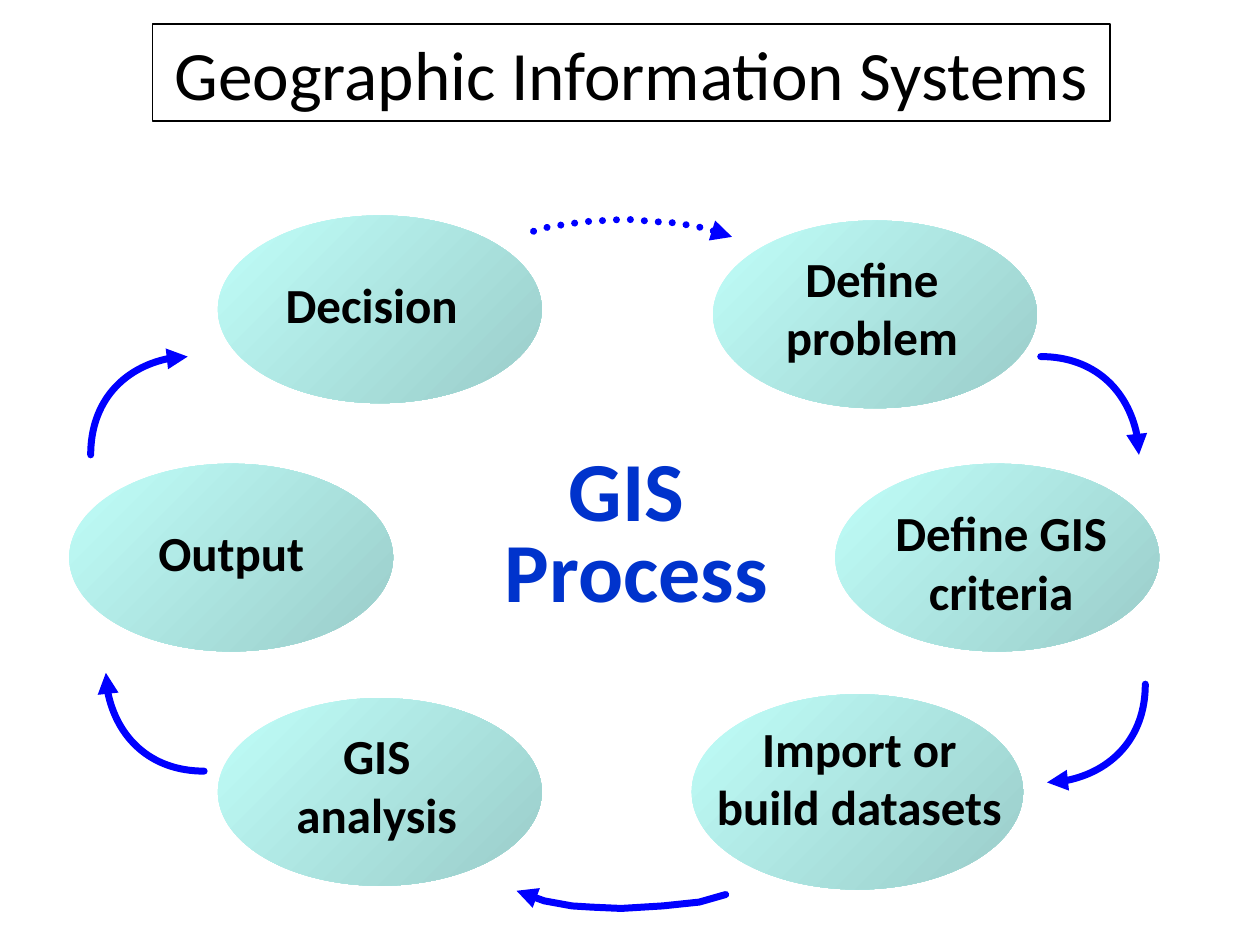
from lxml import etree
from pptx import Presentation
from pptx.dml.color import RGBColor
from pptx.enum.dml import MSO_LINE
from pptx.enum.shapes import MSO_SHAPE
from pptx.enum.text import MSO_ANCHOR, MSO_AUTO_SIZE, PP_ALIGN
from pptx.oxml.ns import qn
from pptx.util import Inches, Pt

BLACK = RGBColor(0x00, 0x00, 0x00)
WHITE = RGBColor(0xFF, 0xFF, 0xFF)
ARROW_BLUE = RGBColor(0x00, 0x00, 0xFF)
CENTER_BLUE = RGBColor(0x00, 0x33, 0xCC)
NODE_LIGHT = RGBColor(0xC0, 0xFE, 0xF9)
NODE_DARK = RGBColor(0x9A, 0xCC, 0xC9)

OVAL = MSO_SHAPE.OVAL
RECTANGLE = MSO_SHAPE.RECTANGLE
CENTER = PP_ALIGN.CENTER
MIDDLE = MSO_ANCHOR.MIDDLE
FIT_SHAPE = MSO_AUTO_SIZE.SHAPE_TO_FIT_TEXT
ROUND_DOT = MSO_LINE.ROUND_DOT

FONT = "Calibri"
ARC_RATIO = 0.55
NODE_SIZE = (2.57, 1.49)
WIDE_NODE_SIZE = (2.63, 1.55)

NODES = [
    ("Output", (0.55, 3.68, *NODE_SIZE), (1.13, 4.1, 1.41, 0.56)),
    ("GIS\vanalysis", (1.73, 5.54, *NODE_SIZE), (2.23, 5.71, 1.52, 1.03)),
    ("Import or\vbuild datasets", (5.49, 5.51, *WIDE_NODE_SIZE), (5.57, 5.65, 2.5, 1.03)),
    ("Define GIS\vcriteria", (6.63, 3.68, *NODE_SIZE), (6.92, 3.94, 2.05, 1.03)),
    ("Define\vproblem", (5.66, 1.75, *NODE_SIZE), (6.12, 1.92, 1.6, 1.03)),
    ("Decision", (1.73, 1.71, *NODE_SIZE), (2.15, 2.13, 1.6, 0.56)),
]
QUARTER_ARROWS = [
    ((8.26, 2.83), (9.04, 2.83), (9.04, 3.61)),
    ((9.09, 5.43), (9.09, 6.21), (8.31, 6.21)),
    ((1.62, 6.12), (0.84, 6.12), (0.84, 5.34)),
    ((0.72, 3.61), (0.72, 2.83), (1.49, 2.83)),
]
BOTTOM_ARROW = [(4.1, 7.07), (4.32, 7.15), (4.54, 7.19), (4.7, 7.2),
                (4.93, 7.21), (5.26, 7.19), (5.55, 7.16), (5.76, 7.1)]
TOP_ARROW = [(5.81, 1.88), (5.59, 1.81), (5.37, 1.77), (5.2, 1.76),
             (4.97, 1.74), (4.64, 1.76), (4.36, 1.8), (4.15, 1.86)]


def to_inches(values):
    """Convert a sequence of numbers to lengths."""
    return [Inches(value) for value in values]


def format_text(text_frame, text, size, color, bold=False, line_spacing=None):
    """Fill a text frame with centred, formatted text."""
    text_frame.text = text
    for paragraph in text_frame.paragraphs:
        paragraph.alignment = CENTER
        paragraph.line_spacing = line_spacing
        for run in paragraph.runs:
            run.font.name = FONT
            run.font.size = Pt(size)
            run.font.bold = bold
            run.font.color.rgb = color


def add_label(slide, box, text, size, color, line_spacing=None):
    """Add an unwrapped bold text box."""
    label = slide.shapes.add_textbox(*to_inches(box))
    label.text_frame.word_wrap = False
    label.text_frame.auto_size = FIT_SHAPE
    format_text(label.text_frame, text, size, color, True, line_spacing)


def add_title(slide, box):
    """Add the framed slide title."""
    title = slide.shapes.add_shape(RECTANGLE, *to_inches(box))
    title.shadow.inherit = False
    title.fill.solid()
    title.fill.fore_color.rgb = WHITE
    title.line.color.rgb = BLACK
    title.line.width = Pt(0.75)
    title.text_frame.word_wrap = True
    title.text_frame.vertical_anchor = MIDDLE
    format_text(title.text_frame, "Geographic Information Systems", 39.6, BLACK)


def add_node(slide, text, ellipse_box, label_box):
    """Add one shaded ellipse with its label."""
    ellipse = slide.shapes.add_shape(OVAL, *to_inches(ellipse_box))
    ellipse.shadow.inherit = False
    ellipse.fill.gradient()
    ellipse.fill.gradient_angle = 315
    for stop, color in zip(ellipse.fill.gradient_stops, (NODE_LIGHT, NODE_DARK)):
        stop.color.rgb = color
    ellipse.line.fill.background()
    add_label(slide, label_box, text, 28, BLACK)


def add_arrow(slide, points, arrow_end, dash=None):
    """Add an open outline through the points with one arrowhead."""
    start, *others = [to_inches(point) for point in points]
    builder = slide.shapes.build_freeform(*start)
    builder.add_line_segments(others, close=False)
    arrow = builder.convert_to_shape()
    arrow.shadow.inherit = False
    arrow.fill.background()
    arrow.line.color.rgb = ARROW_BLUE
    arrow.line.width = Pt(4)
    if dash:
        arrow.line.dash_style = dash
    line = arrow.line._get_or_add_ln()
    line.set("cap", "rnd")
    etree.SubElement(line, qn("a:round"))
    etree.SubElement(line, qn(arrow_end), type="triangle")
    return arrow


def add_quarter_arrow(slide, start, corner, end):
    """Add a quarter-ellipse arrow bending towards its corner."""
    controls = [
        tuple(a + ARC_RATIO * (b - a) for a, b in zip(point, corner))
        for point in (start, end)
    ]
    arrow = add_arrow(slide, [start, *controls, end], "a:tailEnd")
    outline = next(arrow.element.iter(qn("a:path")))
    curve = etree.SubElement(outline, qn("a:cubicBezTo"))
    for segment in outline.findall(qn("a:lnTo")):
        curve.append(segment[0])
        outline.remove(segment)


def add_cycle(slide):
    """Add the arrows, centre caption and nodes of the process cycle."""
    for start, corner, end in QUARTER_ARROWS:
        add_quarter_arrow(slide, start, corner, end)
    add_arrow(slide, BOTTOM_ARROW, "a:headEnd")
    add_arrow(slide, TOP_ARROW, "a:headEnd", ROUND_DOT)
    add_label(slide, (3.88, 3.58, 2.34, 1.38), "GIS \nProcess", 48, CENTER_BLUE, 0.8)
    for text, ellipse_box, label_box in NODES:
        add_node(slide, text, ellipse_box, label_box)


def main():
    """Build and save the presentation."""
    presentation = Presentation()
    presentation.slide_width = Inches(10)
    presentation.slide_height = Inches(7.5)
    slide = presentation.slides.add_slide(presentation.slide_layouts[6])
    add_cycle(slide)
    add_title(slide, (1.21, 0.19, 7.6, 0.77))
    presentation.save("out.pptx")


if __name__ == "__main__":
    main()
